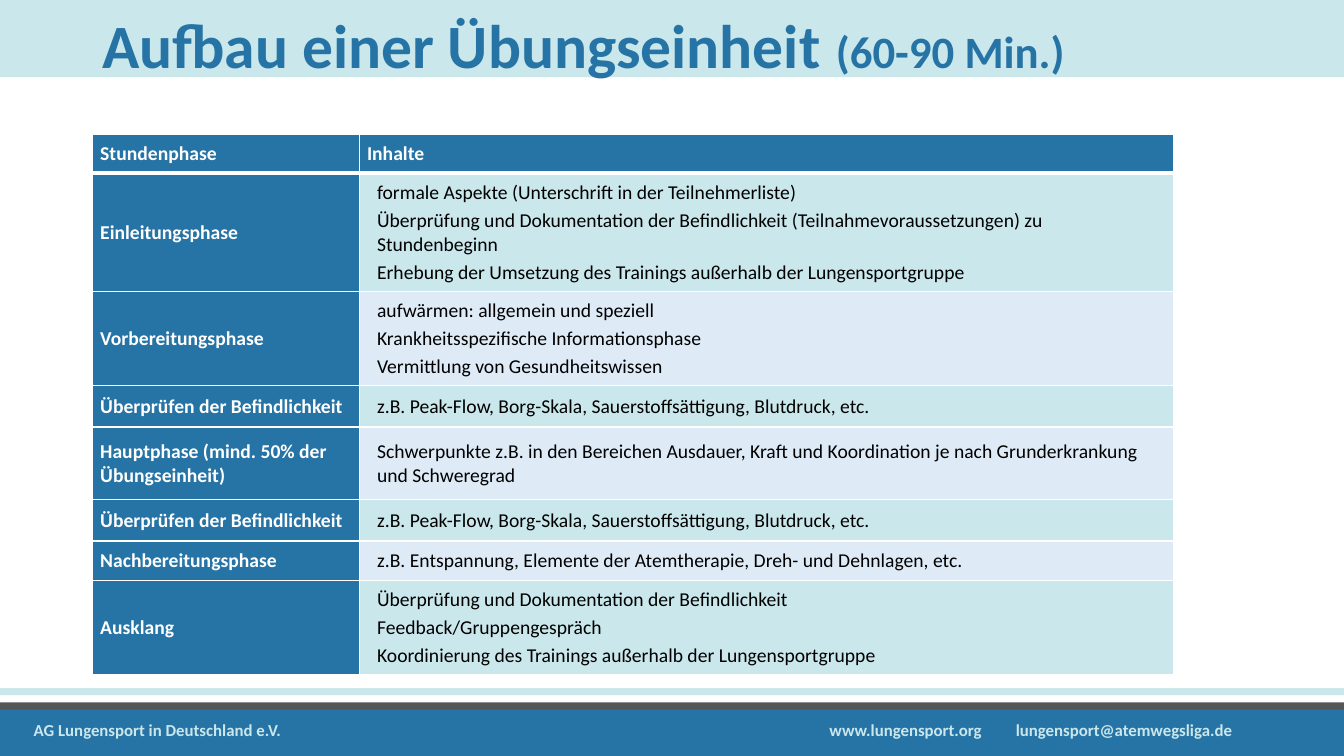
from lxml import etree
from pptx import Presentation
from pptx import util as u
from pptx.dml import color
from pptx.enum import shapes, text
from pptx.oxml import ns

FORM = {"font": "Calibri", "blue": "2673A5", "aqua": "CAE7EC", "pale": "DEEBF7",
        "gray": "575656", "white": "FFFFFF", "black": "000000"}
WIDE, HIGH = 960, 540
EDGES = {"L": 1, "R": 1, "T": 1, "B": 1}

CHECK = ("Überprüfen der Befindlichkeit", 29.5,
         ["z.B. Peak-Flow, Borg-Skala, Sauerstoffsättigung, Blutdruck, etc."])
PHASES = [
    ("Einleitungsphase", 84.5, [
        "formale Aspekte (Unterschrift in der Teilnehmerliste)",
        "Überprüfung und Dokumentation der Befindlichkeit (Teilnahmevoraussetzungen) zu Stundenbeginn",
        "Erhebung der Umsetzung des Trainings außerhalb der Lungensportgruppe"]),
    ("Vorbereitungsphase", 60, [
        "aufwärmen: allgemein und speziell",
        "Krankheitsspezifische Informationsphase",
        "Vermittlung von Gesundheitswissen"]),
    CHECK,
    ("Hauptphase (mind. 50% der Übungseinheit)", 52, [
        "Schwerpunkte z.B. in den Bereichen Ausdauer, Kraft und Koordination "
        "je nach Grunderkrankung und Schweregrad"]),
    CHECK,
    ("Nachbereitungsphase", 28, [
        "z.B. Entspannung, Elemente der Atemtherapie, Dreh- und Dehnlagen, etc."]),
    ("Ausklang", 60, [
        "Überprüfung und Dokumentation der Befindlichkeit",
        "Feedback/Gruppengespräch",
        "Koordinierung des Trainings außerhalb der Lungensportgruppe"]),
]


def rgb(code):
    return color.RGBColor.from_string(code)


def apply(item, **vals):
    for name, val in vals.items():
        setattr(item, name, val)


class Deck:
    def __init__(self, form):
        self.form = form
        self.prs = Presentation()
        apply(self.prs, slide_width=u.Pt(WIDE), slide_height=u.Pt(HIGH))
        self.slide = self.prs.slides.add_slide(self.prs.slide_layouts[6])

    def paint(self, item, tone):
        item.fill.solid()
        item.fill.fore_color.rgb = rgb(self.form[tone])

    def band(self, top, high, tone):
        bar = self.slide.shapes.add_shape(
            shapes.MSO_SHAPE.RECTANGLE, 0, u.Pt(top), u.Pt(WIDE), u.Pt(high))
        bar.shadow.inherit = False
        self.paint(bar, tone)
        bar.line.fill.background()

    def run(self, para, words, size, tone, bold=True):
        run = para.add_run()
        run.text = words
        apply(run.font, name=self.form["font"], size=u.Pt(size), bold=bold)
        run.font.color.rgb = rgb(self.form[tone])

    def label(self, box, parts, tone, tabs=(), **vals):
        frame = self.slide.shapes.add_textbox(*map(u.Pt, box)).text_frame
        apply(frame, word_wrap=True, **vals)
        para = frame.paragraphs[0]
        if tabs:
            stops = etree.SubElement(para._p.get_or_add_pPr(), ns.qn("a:tabLst"))
            for pos in tabs:
                etree.SubElement(stops, ns.qn("a:tab"), pos=str(u.Pt(pos)), algn="l")
        for words, size in parts:
            self.run(para, words, size, tone)
        return para

    def edge(self, cell, widths):
        props = cell._tc.get_or_add_tcPr()
        for spot, (side, width) in enumerate(widths.items()):
            line = etree.Element(ns.qn("a:ln" + side), w=str(u.Pt(width)))
            fill = etree.SubElement(line, ns.qn("a:solidFill"))
            etree.SubElement(fill, ns.qn("a:srgbClr"), val=self.form["white"])
            props.insert(spot, line)

    def cell(self, cell, lines, fill, tone="white", bold=True, indent=0, edges=EDGES):
        pad = u.Pt(5.4)
        apply(cell, margin_left=pad, margin_right=pad, margin_top=pad,
              margin_bottom=pad, vertical_anchor=text.MSO_ANCHOR.MIDDLE)
        self.paint(cell, fill)
        self.edge(cell, edges)
        frame = cell.text_frame
        for num, words in enumerate(lines):
            para = frame.add_paragraph() if num else frame.paragraphs[0]
            para._p.get_or_add_pPr().set("marL", str(u.Pt(indent)))
            para.space_after = u.Pt(3)
            self.run(para, words, 14, tone, bold)

    def table(self, left, top, cols, head, rows):
        highs = [28] + [high for _, high, _ in rows]
        box = map(u.Pt, (left, top, sum(cols), sum(highs)))
        grid = self.slide.shapes.add_table(len(highs), len(cols), *box).table
        apply(grid, first_row=True, horz_banding=False)
        for col, wide in zip(grid.columns, cols):
            col.width = u.Pt(wide)
        for row, high in zip(grid.rows, highs):
            row.height = u.Pt(high)
        for col, words in enumerate(head):
            self.cell(grid.cell(0, col), [words], "blue", edges=EDGES | {"B": 3})
        for num, (phase, _, lines) in enumerate(rows, 1):
            edges = EDGES | {"T": 3 if num == 1 else 1}
            self.cell(grid.cell(num, 0), [phase], "blue", edges=edges)
            self.cell(grid.cell(num, 1), lines, "aqua" if num % 2 else "pale",
                      "black", False, 7.2, edges)


def main():
    deck = Deck(FORM)

    # Header and footer bands
    deck.band(505.4, 34.6, "blue")
    for step, tone in enumerate(["aqua", "white", "gray"]):
        deck.band(491.6 + 5.1 * step, 5.1, tone)
    deck.band(0, 55.2, "aqua")

    # Footer
    deck.label((17, 510.5, 923, 28.8),
               [("AG Lungensport in Deutschland e.V.\twww.lungensport.org"
                 "\tlungensport@atemwegsliga.de", 12)], "aqua", tabs=(568.4, 701.5))

    # Title
    title = deck.label((66.2, 0, 754.6, 69),
                       [("Aufbau einer Übungseinheit ", 44), ("(60-90 Min.)", 32)],
                       "blue", vertical_anchor=text.MSO_ANCHOR.MIDDLE)
    title.line_spacing = 0.9

    # Phases of the session
    deck.table(66.2, 95.8, (190.6, 581.8), ("Stundenphase", "Inhalte"), PHASES)

    deck.prs.save("out.pptx")


if __name__ == "__main__":
    main()
